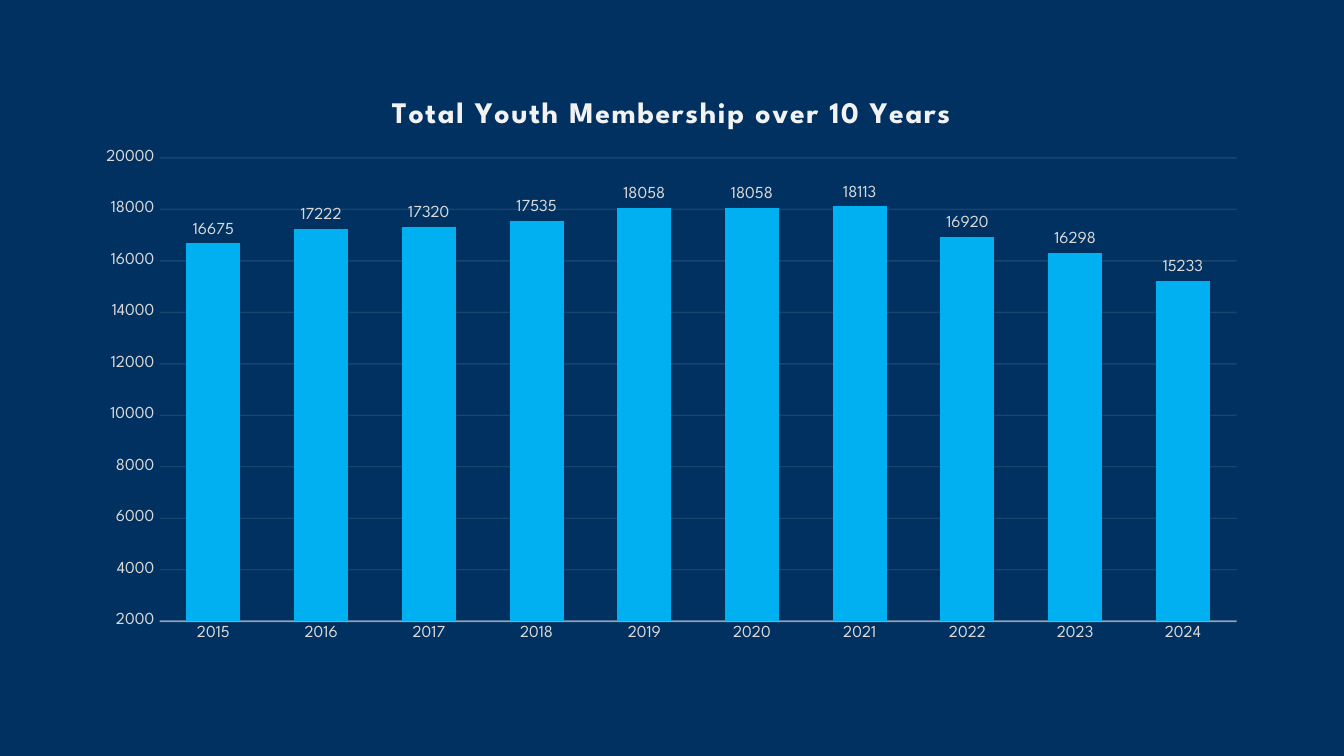
from typing import NamedTuple

from lxml.etree import SubElement
from pptx import Presentation
from pptx.chart.data import CategoryChartData as ChartData
from pptx.dml.color import RGBColor
from pptx.enum.chart import XL_CHART_TYPE as Kind
from pptx.enum.chart import XL_LABEL_POSITION as Place
from pptx.enum.chart import XL_TICK_MARK as Tick
from pptx.oxml import parse_xml
from pptx.oxml.ns import nsdecls, qn
from pptx.util import Cm, Pt

NAVY = RGBColor(0x00, 0x31, 0x60)
BLUE = RGBColor(0x00, 0xB0, 0xF0)
WHITE = RGBColor(0xF2, 0xF2, 0xF2)
GREY = RGBColor(0xD9, 0xD9, 0xD9)
FACE = "League Spartan"


class Style(NamedTuple):
    size: float
    color: RGBColor
    bold: bool = False


class Stroke(NamedTuple):
    width: float
    alpha: int  # percent


TITLE = Style(16, WHITE, True)
LABEL = Style(9, GREY)
BASE = Stroke(1, 54)
GRID = Stroke(0.75, 10)

MEMBERS = {
    2015: 16675, 2016: 17222, 2017: 17320, 2018: 17535, 2019: 18058,
    2020: 18058, 2021: 18113, 2022: 16920, 2023: 16298, 2024: 15233,
}


def set_font(font, style: Style) -> None:
    font.name = FACE
    font.size = Pt(style.size)
    font.bold = style.bold
    font.color.rgb = style.color


def set_line(line, stroke: Stroke) -> None:
    line.width = Pt(stroke.width)
    line.color.rgb = WHITE
    color = line._get_or_add_ln().find(".//" + qn("a:srgbClr"))
    SubElement(color, qn("a:alpha"), val=str(stroke.alpha * 1000))


def set_plot(chart, x: float, y: float, w: float, h: float) -> None:
    """Fix the inner plot area, in fractions of the chart."""
    area = chart._chartSpace.chart.plotArea
    for old in area.findall(qn("c:layout")):
        area.remove(old)
    sizes = "".join(f'<c:{tag} val="{val}"/>' for tag, val in
                    (("x", x), ("y", y), ("w", w), ("h", h)))
    area.insert(0, parse_xml(
        f'<c:layout {nsdecls("c")}><c:manualLayout>'
        '<c:layoutTarget val="inner"/>'
        '<c:xMode val="edge"/><c:yMode val="edge"/>'
        f'{sizes}</c:manualLayout></c:layout>'))


def add_title(chart, text: str) -> None:
    chart.has_title = True
    chart.chart_title.include_in_layout = False
    run = chart.chart_title.text_frame.paragraphs[0].add_run()
    run.text = text
    set_font(run.font, TITLE)
    run._r.get_or_add_rPr().set("spc", "100")


def add_bars(slide) -> None:
    data = ChartData()
    data.categories = [str(year) for year in MEMBERS]
    data.add_series("Series 1", MEMBERS.values())
    chart = slide.shapes.add_chart(
        Kind.COLUMN_CLUSTERED, Cm(1.57), Cm(1.42), Cm(22.25), Cm(10.95), data
    ).chart
    chart.has_legend = False
    chart.font.name = "Calibri"
    chart.font.size = Pt(10)
    add_title(chart, "Total Youth Membership over 10 Years")
    set_plot(chart, 0.065, 0.143, 0.915, 0.8)

    # Columns and their values
    plot = chart.plots[0]
    plot.gap_width, plot.overlap = 100, -24
    plot.vary_by_categories = False
    fill = plot.series[0].format.fill
    fill.solid()
    fill.fore_color.rgb = BLUE
    plot.has_data_labels = True
    labels = plot.data_labels
    labels.show_value = True
    labels.position = Place.OUTSIDE_END
    set_font(labels.font, LABEL)

    # Axes
    years, count = chart.category_axis, chart.value_axis
    for axis in (years, count):
        axis.major_tick_mark = axis.minor_tick_mark = Tick.NONE
        set_font(axis.tick_labels.font, LABEL)
    years.has_major_gridlines = False
    set_line(years.format.line, BASE)
    count.minimum_scale, count.maximum_scale = 2000, 20000
    count.major_unit = 2000
    count.format.line.fill.background()
    count.has_major_gridlines = True
    set_line(count.major_gridlines.format.line, GRID)


def main() -> None:
    deck = Presentation()
    deck.slide_width, deck.slide_height = Cm(25.4), Cm(14.29)
    slide = deck.slides.add_slide(deck.slide_layouts[6])
    back = slide.background.fill
    back.solid()
    back.fore_color.rgb = NAVY
    add_bars(slide)
    deck.save("out.pptx")


if __name__ == "__main__":
    main()
